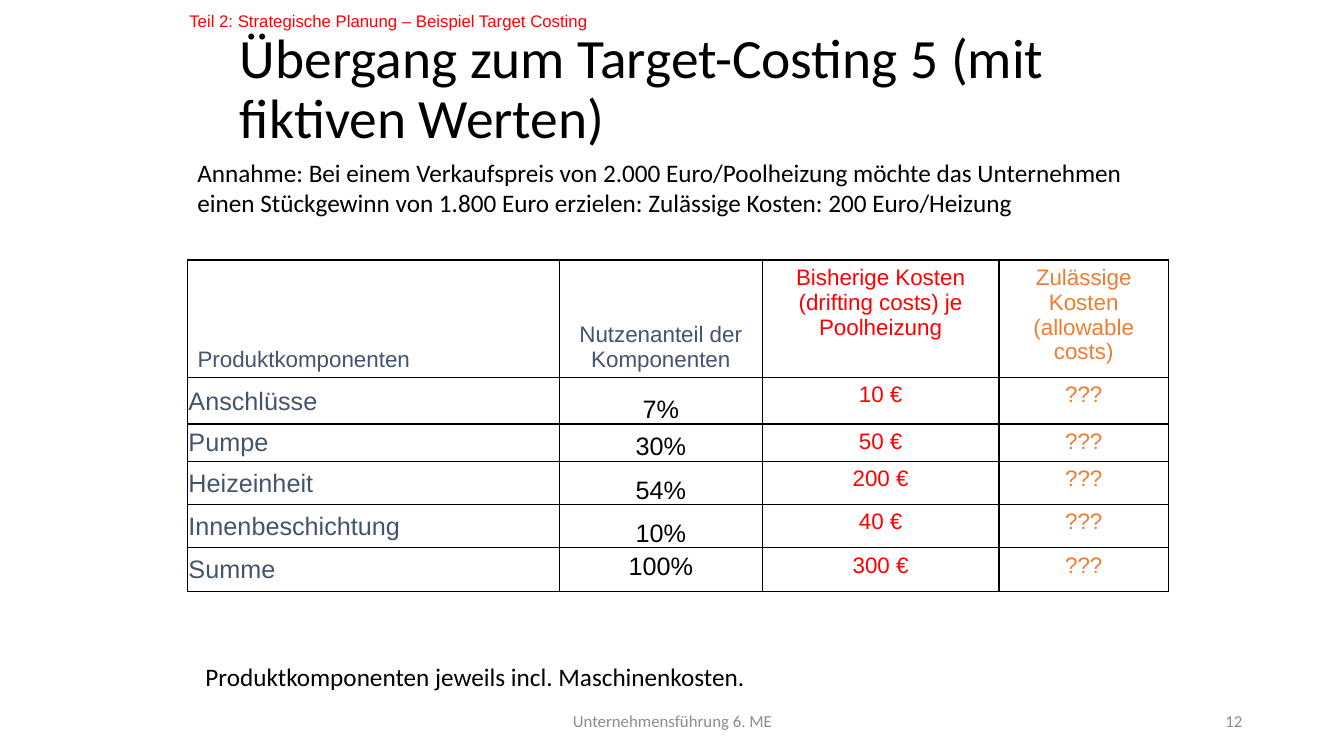
from lxml import etree
from pptx import Presentation, util as u
from pptx.dml.color import RGBColor
from pptx.enum import text
from pptx.oxml.ns import qn

WIDTH, HEIGHT = u.Inches(13.33), u.Inches(7.5)
COLORS = {"ink": "000000", "label": "44546A", "current": "FF0000",
          "allowable": "ED7D31", "footer": "8C8C8C"}
LEFT, CENTER, RIGHT = text.PP_ALIGN.LEFT, text.PP_ALIGN.CENTER, text.PP_ALIGN.RIGHT
TOP, MIDDLE, BOTTOM = (text.MSO_ANCHOR.TOP, text.MSO_ANCHOR.MIDDLE,
                       text.MSO_ANCHOR.BOTTOM)

COLUMN_SHARES = (27.68, 15.08, 17.63, 12.6)
ROW_SHARES = (14.4, 6.13, 4.93, 5.73, 5.73, 5.73)
HEADINGS = ("Produktkomponenten", "Nutzenanteil der Komponenten",
            "Bisherige Kosten (drifting costs) je Poolheizung",
            "Zulässige Kosten (allowable costs)")
COMPONENTS = (("Anschlüsse", "7%", "10 €"), ("Pumpe", "30%", "50 €"),
              ("Heizeinheit", "54%", "200 €"), ("Innenbeschichtung", "10%", "40 €"),
              ("Summe", "100%", "300 €"))


def across(share):
    return round(WIDTH * share / 100)


def down(share):
    return round(HEIGHT * share / 100)


def area(left, top, width, height):
    """Turn percentages of the slide into a position and size."""
    return across(left), down(top), across(width), down(height)


def write(frame, wording, size, color, font="Calibri", align=LEFT):
    paragraph = frame.paragraphs[0]
    paragraph.alignment = align
    run = paragraph.add_run()
    run.text = wording
    for attribute, value in {"name": font, "size": u.Pt(size)}.items():
        setattr(run.font, attribute, value)
    run.font.color.rgb = RGBColor.from_string(COLORS[color])
    return paragraph


def add_text(slide, place, wording, size, color, anchor=TOP, **style):
    frame = slide.shapes.add_textbox(*area(*place)).text_frame
    for attribute, value in {"word_wrap": True, "vertical_anchor": anchor}.items():
        setattr(frame, attribute, value)
    write(frame, wording, size, color, **style)


def set_title(slide, place, wording):
    title = slide.shapes.title
    for attribute, value in zip(("left", "top", "width", "height"), area(*place)):
        setattr(title, attribute, value)
    frame = title.text_frame
    settings = {"word_wrap": True, "auto_size": text.MSO_AUTO_SIZE.NONE,
                "vertical_anchor": MIDDLE}
    for attribute, value in settings.items():
        setattr(frame, attribute, value)
    write(frame, wording, 39.6, "ink").line_spacing = 0.9


def draw_borders(cell):
    properties = cell._tc.get_or_add_tcPr()
    for position, side in enumerate(("a:lnL", "a:lnR", "a:lnT", "a:lnB")):
        line = etree.Element(qn(side), w=str(u.Pt(1)))
        fill = etree.SubElement(line, qn("a:solidFill"))
        etree.SubElement(fill, qn("a:srgbClr"), val=COLORS["ink"])
        properties.insert(position, line)


def fill_cell(cell, wording, size, color, align, anchor, tight=False):
    cell.fill.background()
    cell.vertical_anchor = anchor
    if tight:
        for side in ("left", "right", "top"):
            setattr(cell, f"margin_{side}", u.Inches(0.01))
        cell.margin_bottom = 0
    write(cell.text_frame, wording, size, color, "Arial", align)
    draw_borders(cell)


def add_cost_table(slide, left, top):
    place = area(left, top, sum(COLUMN_SHARES), sum(ROW_SHARES))
    costs = slide.shapes.add_table(len(ROW_SHARES), len(COLUMN_SHARES), *place).table
    costs.first_row = costs.horz_banding = False
    for column, share in zip(costs.columns, COLUMN_SHARES):
        column.width = across(share)
    for row, share in zip(costs.rows, ROW_SHARES):
        row.height = down(share)

    heading_styles = (("label", LEFT, BOTTOM), ("label", CENTER, BOTTOM),
                      ("current", CENTER, TOP), ("allowable", CENTER, TOP))
    for column, (heading, style) in enumerate(zip(HEADINGS, heading_styles)):
        fill_cell(costs.cell(0, column), heading, 16, *style)

    for row, (component, benefit, current) in enumerate(COMPONENTS, start=1):
        is_total = component == "Summe"
        fill_cell(costs.cell(row, 0), component, 18, "label", LEFT, MIDDLE, True)
        fill_cell(costs.cell(row, 1), benefit, 18, "ink", CENTER,
                  TOP if is_total else BOTTOM, not is_total)
        fill_cell(costs.cell(row, 2), current, 16, "current", CENTER, TOP)
        fill_cell(costs.cell(row, 3), "???", 16, "allowable", CENTER, TOP)


def main():
    deck = Presentation()
    deck.slide_width, deck.slide_height = WIDTH, HEIGHT
    slide = deck.slides.add_slide(deck.slide_layouts[5])

    add_text(slide, (33.16, 92.67, 33.76, 5.33), "Unternehmensführung 6. ME",
             12, "footer", MIDDLE, align=CENTER)
    add_text(slide, (70.67, 92.67, 22.5, 5.33), "12", 12, "footer", MIDDLE, align=RIGHT)
    set_title(slide, (17.1, 7.47, 66.69, 8.93),
              "Übergang zum Target-Costing 5 (mit fiktiven Werten)")
    add_cost_table(slide, 13.95, 34.4)
    add_text(slide, (13.95, 20.13, 72.09, 9.47),
             "Annahme: Bei einem Verkaufspreis von 2.000 Euro/Poolheizung möchte das "
             "Unternehmen einen Stückgewinn von 1.800 Euro erzielen: Zulässige Kosten: "
             "200 Euro/Heizung", 18, "ink")
    add_text(slide, (14.55, 86.8, 51.39, 5.33),
             "Produktkomponenten jeweils incl. Maschinenkosten.", 18, "ink")
    add_text(slide, (13.35, 0.8, 35.71, 4),
             "Teil 2: Strategische Planung – Beispiel Target Costing",
             12, "current", font="Arial")
    deck.save("out.pptx")


if __name__ == "__main__":
    main()
